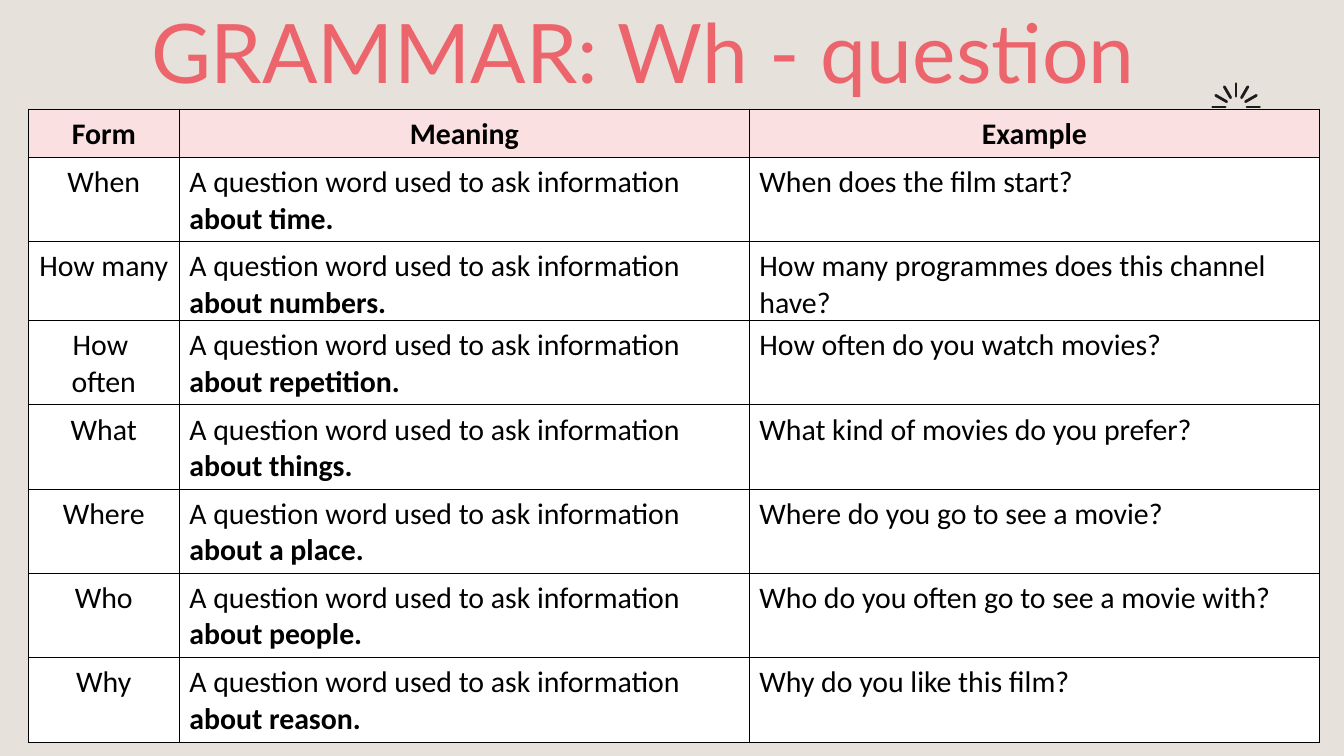
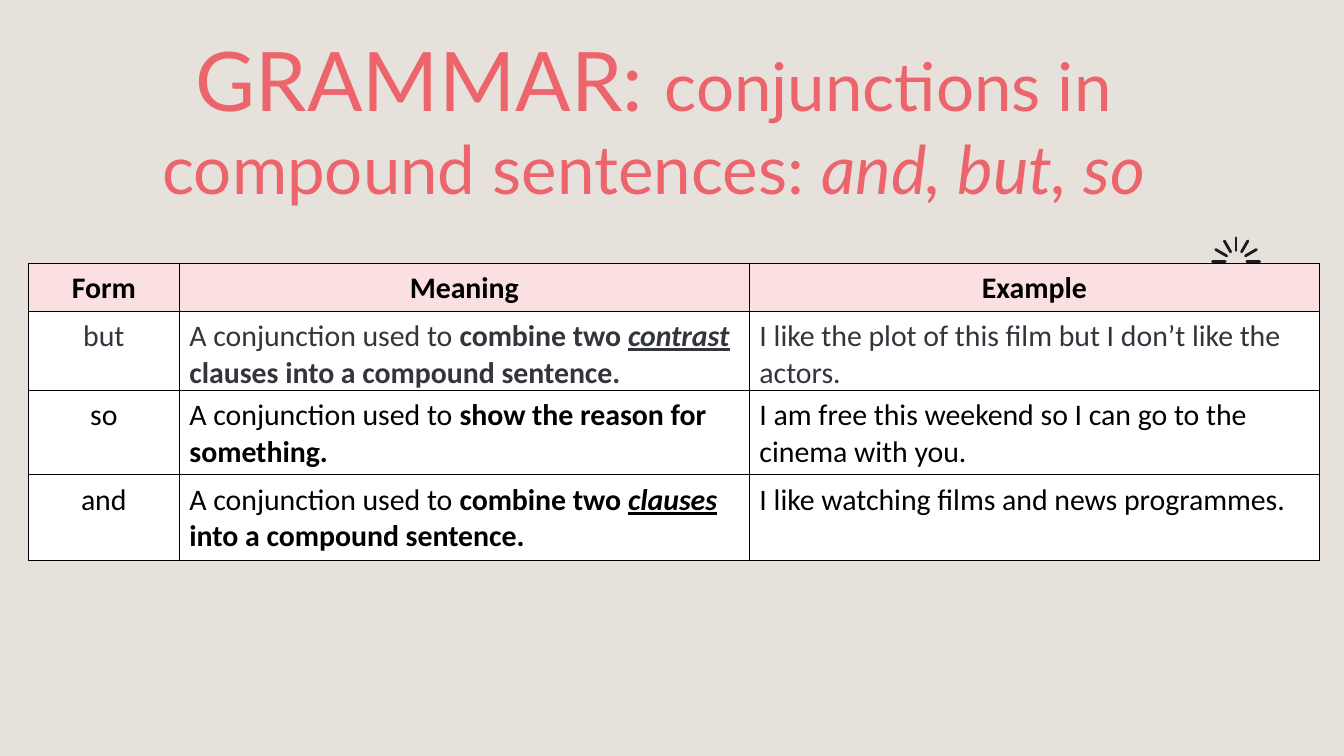
from dataclasses import dataclass
from math import cos, pi, sin

from lxml.etree import SubElement
from pptx import Presentation
from pptx.dml.color import RGBColor
from pptx.enum.shapes import MSO_CONNECTOR
from pptx.enum.text import MSO_ANCHOR, PP_ALIGN
from pptx.oxml import parse_xml
from pptx.oxml.ns import nsdecls, qn
from pptx.util import Pt


@dataclass(frozen=True)
class Theme:
    background: str = "E6E1DA"
    title: str = "EC646C"
    header: str = "FBE0E2"
    cell: str = "FFFFFF"
    text: str = "000000"
    muted: str = "33353D"
    burst: str = "1C1C1C"
    title_font: str = "Lato"
    table_font: str = "Calibri"
    title_size: float = 44
    subtitle_size: float = 36
    table_size: float = 16


THEME = Theme()
TABLE_LEFT = 15.1
COLUMNS = (81, 305.4, 305.4)
HEADER_HEIGHT, HEADER_FRAME = 23, 25.9
ROW_HEIGHT, ROW_FRAME = 39.6, 45.1
OVERLAP = 2.7
BURST_X, BURST_INNER, BURST_OUTER, BURST_RAYS = 662.2, 5.8, 12.6, 12
ALIGNMENTS = (PP_ALIGN.CENTER, PP_ALIGN.LEFT, PP_ALIGN.LEFT)

QUESTIONS = [
    ("When", "about time.", "When does the film start?"),
    ("How many", "about numbers.", "How many programmes does this channel have?"),
    ("How \noften", "about repetition.", "How often do you watch movies?"),
    ("What", "about things.", "What kind of movies do you prefer?"),
    ("Where", "about a place.", "Where do you go to see a movie?"),
    ("Who", "about people.", "Who do you often go to see a movie with?"),
    ("Why", "about reason.", "Why do you like this film?"),
]

CONJUNCTIONS = [
    ("but", [("combine two ", "b"), ("contrast", "biu"),
             (" clauses into a compound sentence.", "b")],
     "I like the plot of this film but I don’t like the actors."),
    ("so", [("show the reason for something.", "b")],
     "I am free this weekend so I can go to the cinema with you."),
    ("and", [("combine two ", "b"), ("clauses", "biu"),
             (" into a compound sentence.", "b")],
     "I like watching films and news programmes."),
]


def add_run(paragraph, text, font, size, color, style=""):
    for index, line in enumerate(text.split("\n")):
        if index:
            paragraph.add_line_break()
        run = paragraph.add_run()
        run.text = line
        run.font.name = font
        run.font.size = Pt(size)
        run.font.color.rgb = RGBColor.from_string(color)
        run.font.bold = "b" in style
        run.font.italic = "i" in style
        run.font.underline = "u" in style


def add_title(slide, top, runs):
    shape = slide.shapes.add_textbox(Pt(60.5), Pt(top), Pt(579.6), Pt(31))
    frame = shape.text_frame
    frame.word_wrap = True
    frame.vertical_anchor = MSO_ANCHOR.MIDDLE
    frame.margin_left = frame.margin_right = Pt(7.2)
    frame.margin_top = frame.margin_bottom = Pt(7.2)
    paragraph = frame.paragraphs[0]
    paragraph.alignment = PP_ALIGN.CENTER
    for text, size, style in runs:
        add_run(paragraph, text, THEME.title_font, size, THEME.title, style)


def add_burst(slide, center_y):
    group = slide.shapes.add_group_shape()
    for ray in range(BURST_RAYS):
        angle = 2 * pi * ray / BURST_RAYS
        (x1, y1), (x2, y2) = [
            (Pt(BURST_X + radius * sin(angle)), Pt(center_y - radius * cos(angle)))
            for radius in (BURST_OUTER, BURST_INNER)
        ]
        connector = group.shapes.add_connector(MSO_CONNECTOR.STRAIGHT, x1, y1, x2, y2)
        connector.line.color.rgb = RGBColor.from_string(THEME.burst)
        connector.line.width = Pt(1.5)
        connector.line._get_or_add_ln().set("cap", "rnd")
        SubElement(connector._element.spPr, qn("a:effectLst"))


def add_borders(cell):
    properties = cell._tc.get_or_add_tcPr()
    for index, side in enumerate(("lnL", "lnR", "lnT", "lnB")):
        properties.insert(index, parse_xml(
            f'<a:{side} {nsdecls("a")} w="{Pt(0.5)}"><a:solidFill>'
            f'<a:srgbClr val="{THEME.text}"/></a:solidFill></a:{side}>'))


def add_row(slide, top, contents, height, frame_height, fill, color, alignments, anchor):
    frame = slide.shapes.add_table(
        1, len(COLUMNS), Pt(TABLE_LEFT), Pt(top), Pt(sum(COLUMNS)), Pt(height))
    table = frame.table
    table.first_row = table.horz_banding = False
    for column, width in zip(table.columns, COLUMNS):
        column.width = Pt(width)
    for cell, runs, alignment in zip(table.rows[0].cells, contents, alignments):
        cell.fill.solid()
        cell.fill.fore_color.rgb = RGBColor.from_string(fill)
        cell.margin_left = cell.margin_right = Pt(5.4)
        cell.margin_top = cell.margin_bottom = Pt(3.6)
        cell.vertical_anchor = anchor
        add_borders(cell)
        paragraph = cell.text_frame.paragraphs[0]
        paragraph.alignment = alignment
        for text, style in runs:
            add_run(paragraph, text, THEME.table_font, THEME.table_size, color, style)
    frame.height = Pt(frame_height)


def add_grammar_table(slide, top, rows, overlapped, muted=()):
    header = [[(text, "b")] for text in ("Form", "Meaning", "Example")]
    add_row(slide, top, header, HEADER_HEIGHT, HEADER_FRAME, THEME.header, THEME.text,
            [PP_ALIGN.CENTER] * len(COLUMNS), MSO_ANCHOR.MIDDLE)
    top += HEADER_FRAME
    for form, meaning, example in rows:
        color = THEME.muted if form in muted else THEME.text
        add_row(slide, top, ([(form, "")], meaning, [(example, "")]), ROW_HEIGHT,
                ROW_FRAME, THEME.cell, color, ALIGNMENTS, MSO_ANCHOR.TOP)
        top += ROW_FRAME - (OVERLAP if form == overlapped else 0)


def add_grammar_slide(presentation, title_top, title_runs, table_top, rows,
                      overlapped, muted=()):
    slide = presentation.slides.add_slide(presentation.slide_layouts[6])
    slide.background.fill.solid()
    slide.background.fill.fore_color.rgb = RGBColor.from_string(THEME.background)
    add_title(slide, title_top, title_runs)
    add_burst(slide, table_top - 1)
    add_grammar_table(slide, table_top, rows, overlapped, muted)


def main():
    presentation = Presentation()
    presentation.slide_width = Pt(720)
    presentation.slide_height = Pt(405)

    questions = [
        (form, [("A question word used to ask information ", ""), (topic, "b")], example)
        for form, topic, example in QUESTIONS
    ]
    add_grammar_slide(
        presentation, 11.5, [("GRAMMAR: Wh - question ", THEME.title_size, "")],
        58.4, questions, overlapped="How many")

    conjunctions = [
        (form, [("A conjunction used to ", ""), *purpose], example)
        for form, purpose, example in CONJUNCTIONS
    ]
    add_grammar_slide(
        presentation, 48.2,
        [("GRAMMAR: ", THEME.title_size, ""),
         ("conjunctions in compound sentences: ", THEME.subtitle_size, ""),
         ("and, but, so", THEME.subtitle_size, "i")],
        141, conjunctions, overlapped="but", muted=("but",))

    presentation.save("out.pptx")


if __name__ == "__main__":
    main()
